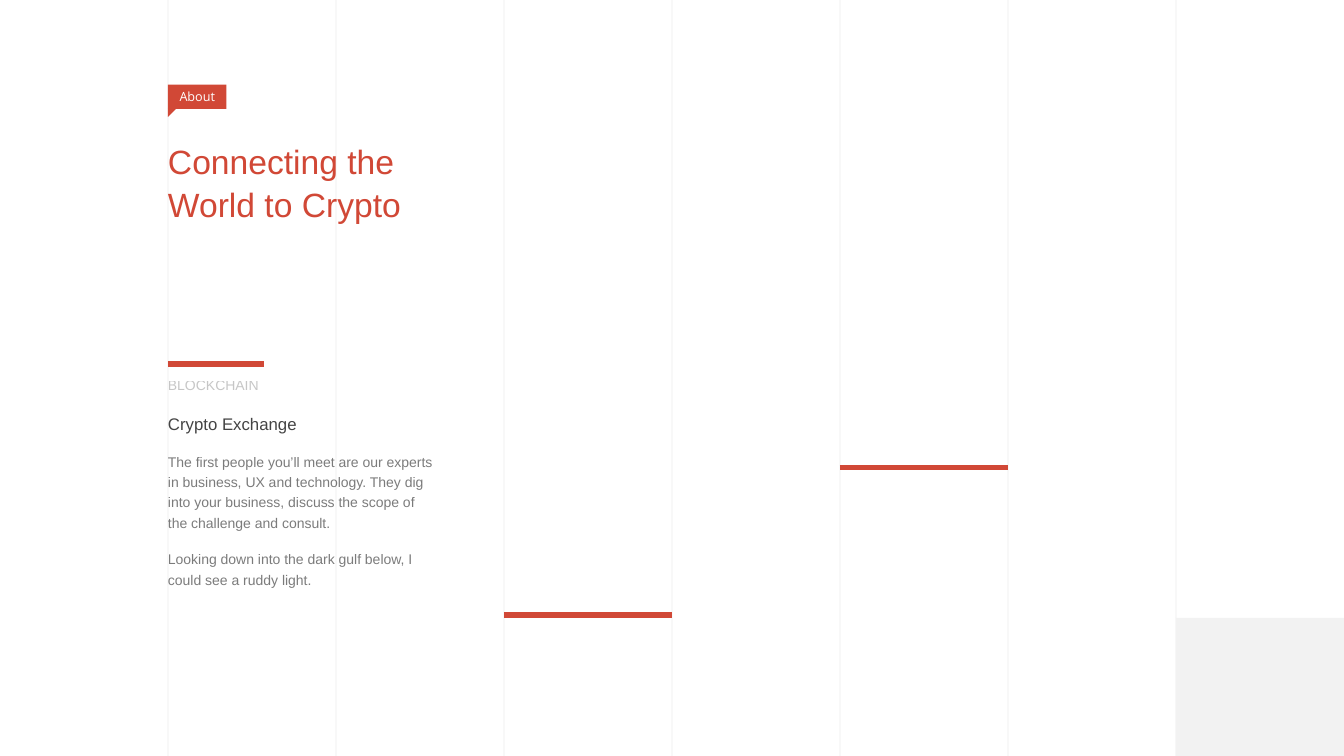
from pptx import Presentation
from pptx.dml.color import RGBColor
from pptx.enum.shapes import MSO_CONNECTOR, MSO_SHAPE
from pptx.enum.text import MSO_ANCHOR, PP_ALIGN
from pptx.oxml.ns import qn
from pptx.util import Inches, Pt
from lxml import etree

STRAIGHT = MSO_CONNECTOR.STRAIGHT
RECTANGLE, RIGHT_TRIANGLE = MSO_SHAPE.RECTANGLE, MSO_SHAPE.RIGHT_TRIANGLE
TOP, MIDDLE = MSO_ANCHOR.TOP, MSO_ANCHOR.MIDDLE
LEFT, CENTER = PP_ALIGN.LEFT, PP_ALIGN.CENTER

RED = RGBColor(0xD1, 0x48, 0x36)
DARK = RGBColor(0x44, 0x44, 0x44)
PALE = RGBColor(0xF2, 0xF2, 0xF2)
WHITE = RGBColor(0xFF, 0xFF, 0xFF)

TAG = "About"
HEADLINE = "Connecting the\vWorld to Crypto"
CATEGORY = "BLOCKCHAIN"
SUBJECT = "Crypto Exchange"
DETAILS = [
    "The first people you’ll meet are our experts in business, UX and technology. "
    "They dig into your business, discuss the scope of the challenge and consult.",
    "Looking down into the dark gulf below, I could see a ruddy light.",
]

WIDTH, HEIGHT = 13.33, 7.5
COLUMNS = 8
COLUMN = WIDTH / COLUMNS
# start column, length in columns, distance from the top
RED_BARS = [(1, 0.57, 3.61), (3, 1, 6.1), (5, 1, 4.64)]
TAG_TOP, TAG_WIDTH, TAG_HEIGHT, TAG_TAIL = 0.84, 0.58, 0.24, 0.08
CORNER_TOP = 6.13

prs = Presentation()
prs.slide_width, prs.slide_height = Inches(WIDTH), Inches(HEIGHT)
slide = prs.slides.add_slide(prs.slide_layouts[6])


def set_opacity(element, percent):
    for color in element.iter(qn("a:srgbClr")):
        etree.SubElement(color, qn("a:alpha")).set("val", str(percent * 1000))


def add_line(x1, y1, x2, y2, color, weight, opacity=100):
    line = slide.shapes.add_connector(
        STRAIGHT, Inches(x1), Inches(y1), Inches(x2), Inches(y2))
    line.line.color.rgb = color
    line.line.width = Pt(weight)
    properties = line.line._get_or_add_ln().getparent()
    etree.SubElement(properties, qn("a:effectLst"))
    if opacity < 100:
        set_opacity(properties, opacity)


def add_block(kind, left, top, width, height, color):
    block = slide.shapes.add_shape(
        kind, Inches(left), Inches(top), Inches(width), Inches(height))
    block.shadow.inherit = False
    block.fill.solid()
    block.fill.fore_color.rgb = color
    block.line.fill.background()
    return block


def add_text(frame, text, *, size, color, font="Arial", opacity=100, align=LEFT,
             spacing=None, before=0):
    """Fill the frame's empty first paragraph, or add a paragraph after its text."""
    paragraph = frame.add_paragraph() if frame.text else frame.paragraphs[0]
    paragraph.text = text
    paragraph.alignment = align
    paragraph.space_before = Pt(before)
    if spacing:
        paragraph.line_spacing = spacing
    for run in paragraph.runs:
        run.font.name, run.font.size = font, Pt(size)
        run.font.color.rgb = color
        if opacity < 100:
            set_opacity(run._r, opacity)


def add_frame(left, top, width, height, wrap=True):
    frame = slide.shapes.add_textbox(
        Inches(left), Inches(top), Inches(width), Inches(height)).text_frame
    frame.margin_left = frame.margin_right = frame.margin_top = frame.margin_bottom = 0
    frame.word_wrap = wrap
    frame.vertical_anchor = TOP
    return frame


for column in range(1, COLUMNS):
    add_line(column * COLUMN, 0, column * COLUMN, HEIGHT, DARK, 0.5, opacity=10)
add_block(RECTANGLE, (COLUMNS - 1) * COLUMN, CORNER_TOP, COLUMN, HEIGHT - CORNER_TOP, PALE)

headline = add_frame(COLUMN, 1.37, 3 * COLUMN, 1.12)
add_text(headline, HEADLINE, size=24, color=RED, spacing=1.07)

story = add_frame(COLUMN, 4.06, 2.64, 1.98)
add_text(story, SUBJECT, size=12, color=DARK, spacing=1.2)
for detail in DETAILS:
    add_text(story, detail, size=10, color=DARK, opacity=70, spacing=1.2, before=12)

category = add_frame(COLUMN, 3.74, 0.94, 0.17, wrap=False)
add_text(category, CATEGORY, size=10, color=DARK, opacity=30)

for start, length, top in RED_BARS:
    add_line(start * COLUMN, top, (start + length) * COLUMN, top, RED, 4)

tag = add_block(RECTANGLE, COLUMN, TAG_TOP, TAG_WIDTH, TAG_HEIGHT, RED).text_frame
tag.vertical_anchor = MIDDLE
tag.word_wrap = False
add_text(tag, TAG, size=9, color=WHITE, font="Open Sans", align=CENTER)
tail = add_block(RIGHT_TRIANGLE, COLUMN, TAG_TOP + TAG_HEIGHT, TAG_TAIL, TAG_TAIL, RED)
tail._element.spPr.find(qn("a:xfrm")).set("flipV", "1")

prs.save("out.pptx")
